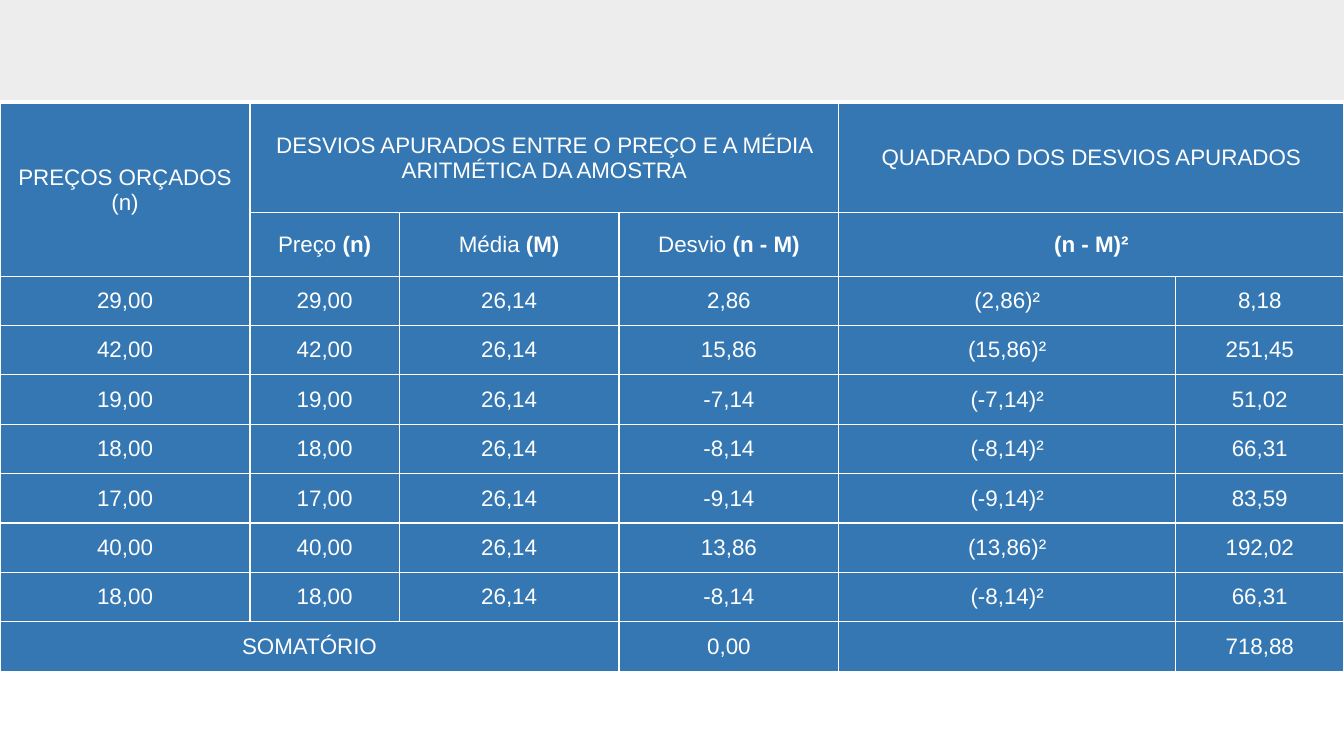
"""Build a slide with the table of price deviations and their squares."""
from lxml import etree
from pptx import Presentation, util as u
from pptx.dml.color import RGBColor
from pptx.enum import shapes, text
from pptx.oxml import ns

theme = {
    "band": RGBColor.from_string("EDEDED"),
    "cell": RGBColor.from_string("3477B2"),
    "ink": RGBColor.from_string("FFFFFF"),
    "rule": "FFFFFF",
    "font": "Arial",
    "size": u.Pt(16),
}
face = {"name": theme["font"], "size": theme["size"]}
frame = {
    "margin_left": u.Inches(0.05),
    "margin_right": u.Inches(0.05),
    "margin_top": 0,
    "margin_bottom": 0,
    "vertical_anchor": text.MSO_ANCHOR.MIDDLE,
}

mean = "26,14"
sample = [
    ("29,00", "2,86", "8,18"),
    ("42,00", "15,86", "251,45"),
    ("19,00", "-7,14", "51,02"),
    ("18,00", "-8,14", "66,31"),
    ("17,00", "-9,14", "83,59"),
    ("40,00", "13,86", "192,02"),
    ("18,00", "-8,14", "66,31"),
]
heads = [
    ["PREÇOS ORÇADOS (n)",
     "DESVIOS APURADOS ENTRE O PREÇO E A MÉDIA ARITMÉTICA DA AMOSTRA",
     "", "", "QUADRADO DOS DESVIOS APURADOS", ""],
    ["", ("Preço ", "(n)"), ("Média ", "(M)"), ("Desvio ", "(n - M)"),
     ("", "(n - M)²"), ""],
]
body = [[price, price, mean, dev, f"({dev})²", square]
        for price, dev, square in sample]
total = [["SOMATÓRIO", "", "", "0,00", "", "718,88"]]
rows = heads + body + total
cols = [2.48, 1.48, 2.18, 2.18, 3.34, 1.67]
highs = [1.08, 0.63] + [0.49] * (len(rows) - 2)
merges = [((0, 0), (1, 0)), ((0, 1), (0, 3)), ((0, 4), (0, 5)),
          ((1, 4), (1, 5)), ((9, 0), (9, 2))]


def set_rules(cell):
    props = cell._tc.get_or_add_tcPr()
    for spot, side in enumerate("LRTB"):
        line = etree.Element(ns.qn(f"a:ln{side}"), w=str(u.Pt(1)))
        fill = etree.SubElement(line, ns.qn("a:solidFill"))
        etree.SubElement(fill, ns.qn("a:srgbClr"), val=theme["rule"])
        props.insert(spot, line)


deck = Presentation()
deck.slide_width, deck.slide_height = u.Inches(13.33), u.Inches(7.5)
slide = deck.slides.add_slide(deck.slide_layouts[6])

band = slide.shapes.add_shape(shapes.MSO_SHAPE.RECTANGLE, 0, 0,
                              deck.slide_width, u.Inches(0.99))
band.shadow.inherit = False
band.fill.solid()
band.fill.fore_color.rgb = theme["band"]
band.line.fill.background()

table = slide.shapes.add_table(len(rows), len(cols), 0, u.Inches(1.03),
                               deck.slide_width, u.Inches(sum(highs))).table
table.horz_banding = False
for col, width in zip(table.columns, cols):
    col.width = u.Inches(width)
for row, high in zip(table.rows, highs):
    row.height = u.Inches(high)
for start, end in merges:
    table.cell(*start).merge(table.cell(*end))

for i, row in enumerate(rows):
    for j, words in enumerate(row):
        cell = table.cell(i, j)
        cell.fill.solid()
        cell.fill.fore_color.rgb = theme["cell"]
        set_rules(cell)
        for key, value in frame.items():
            setattr(cell, key, value)
        para = cell.text_frame.paragraphs[0]
        para.alignment = text.PP_ALIGN.CENTER
        parts = words if isinstance(words, tuple) else (words,)
        for bold, part in enumerate(parts):
            if part:
                run = para.add_run()
                run.text = part
                for key, value in {**face, "bold": bool(bold)}.items():
                    setattr(run.font, key, value)
                run.font.color.rgb = theme["ink"]

deck.save("out.pptx")
